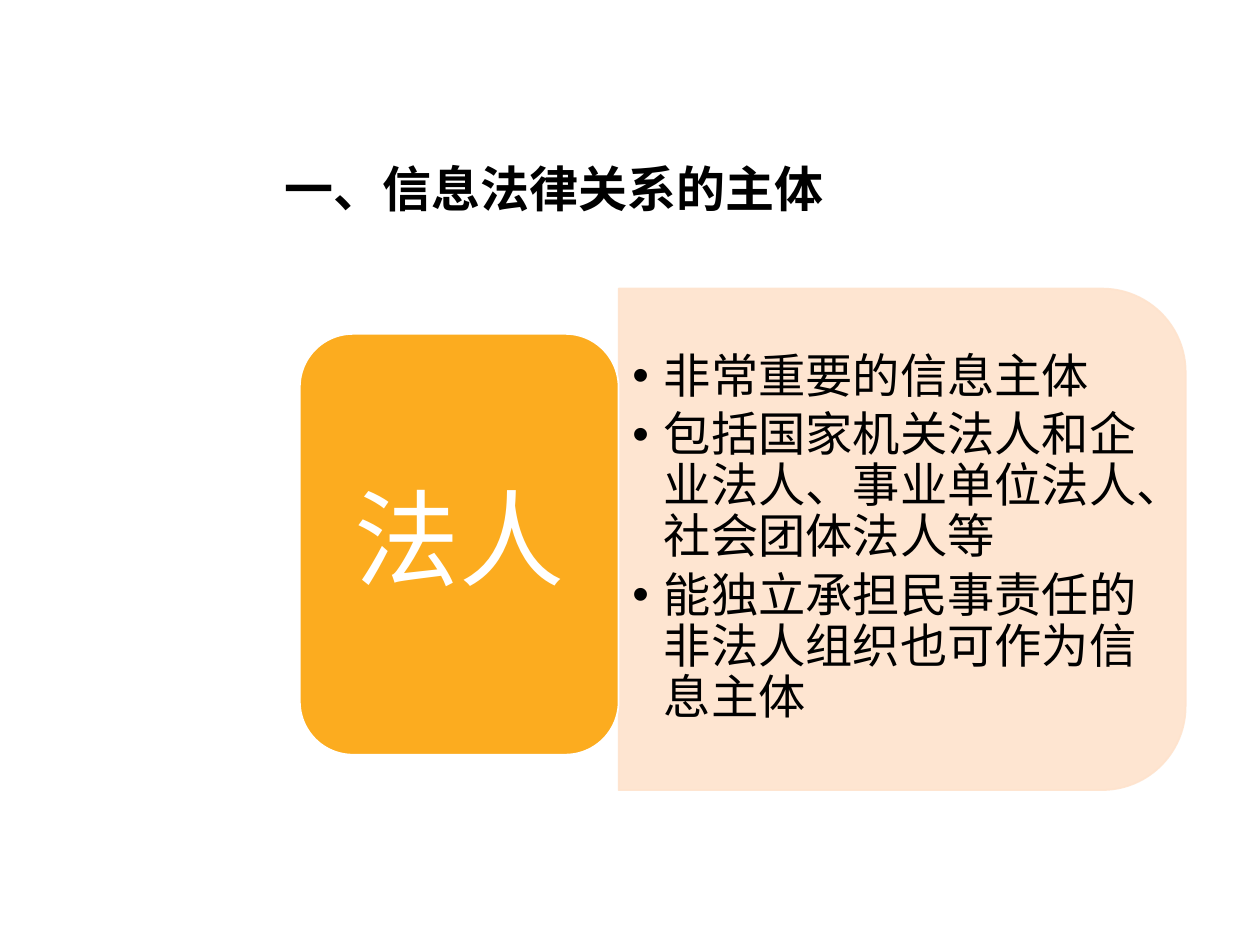
from lxml import etree
from pptx import Presentation
from pptx.dml.color import RGBColor
from pptx.enum.shapes import MSO_SHAPE
from pptx.enum.text import MSO_ANCHOR, MSO_AUTO_SIZE, PP_ALIGN
from pptx.oxml.ns import qn
from pptx.util import Inches, Pt

ROUND = MSO_SHAPE.ROUNDED_RECTANGLE
TAB = MSO_SHAPE.ROUND_2_SAME_RECTANGLE
TOP, MID = MSO_ANCHOR.TOP, MSO_ANCHOR.MIDDLE
LEFT, CENTER = PP_ALIGN.LEFT, PP_ALIGN.CENTER
FIXED = MSO_AUTO_SIZE.NONE
INK = {"text": "000000", "panel": "FEE3CD", "label": "FCAC1F", "white": "FFFFFF"}
POINTS = [
    "非常重要的信息主体",
    "包括国家机关法人和企业法人、事业单位法人、社会团体法人等",
    "能独立承担民事责任的非法人组织也可作为信息主体",
]


class Page:
    """Slide on a grid of 100 columns by 75 rows, with its text and fill style."""

    def __init__(self, deck):
        self.slide = deck.slides.add_slide(deck.slide_layouts[1])
        self.col = deck.slide_width / 100
        self.row = deck.slide_height / 75

    def box(self, x, y, w, h):
        return [int(n) for n in (x * self.col, y * self.row, w * self.col, h * self.row)]

    def place(self, shape, area):
        shape.left, shape.top, shape.width, shape.height = self.box(*area)

    def frame(self, shape, anchor, side, edge):
        frame = shape.text_frame
        frame.word_wrap, frame.auto_size = True, FIXED
        frame.vertical_anchor = anchor
        frame.margin_left = frame.margin_right = Inches(side)
        frame.margin_top = frame.margin_bottom = Inches(edge)
        return frame

    def add_text(self, para, text, size, ink="text", font="Arial", bold=False, align=LEFT):
        para.alignment = align
        para.space_before = Pt(0)
        run = para.add_run()
        run.text = text
        run.font.name, run.font.size, run.font.bold = font, Pt(size), bold
        run.font.color.rgb = RGBColor.from_string(INK[ink])

    def title(self, text, area):
        shape = self.slide.shapes.title
        self.place(shape, area)
        frame = self.frame(shape, TOP, 0.1, 0.05)
        self.add_text(frame.paragraphs[0], text, 28, font="DejaVu Sans", bold=True)

    def shape(self, kind, area, fill, line, alpha=None):
        shape = self.slide.shapes.add_shape(kind, *self.box(*area))
        shape.shadow.inherit = False
        shape.fill.solid()
        shape.fill.fore_color.rgb = RGBColor.from_string(INK[fill])
        shape.line.color.rgb = RGBColor.from_string(INK[line])
        shape.line.width = Pt(1)
        if alpha:
            for tint in shape._element.spPr.iter(qn("a:srgbClr")):
                etree.SubElement(tint, qn("a:alpha")).set("val", str(alpha * 1000))
        return shape

    def panel(self, area):
        shape = self.shape(TAB, area, "panel", "panel", 90)
        shape.rotation = 90

    def label(self, text, area):
        shape = self.shape(ROUND, area, "label", "white")
        para = self.frame(shape, MID, 0.25, 0.12).paragraphs[0]
        para.line_spacing = 0.9
        self.add_text(para, text, 60, "white", align=CENTER)

    def bullet(self, para):
        props = para._p.get_or_add_pPr()
        props.set("marL", str(Inches(0.25)))
        props.set("indent", str(-Inches(0.25)))
        etree.SubElement(props, qn("a:buFont")).set("typeface", "Arial")
        etree.SubElement(props, qn("a:buChar")).set("char", "•")

    def points(self, items, area):
        shape = self.slide.placeholders[1]
        self.place(shape, area)
        self.slide.shapes._spTree.append(shape._element)
        frame = self.frame(shape, MID, 0.11, 0.06)
        for i, item in enumerate(items):
            para = frame.add_paragraph() if i else frame.paragraphs[0]
            self.bullet(para)
            para.line_spacing, para.space_after = 0.9, Pt(4)
            self.add_text(para, item, 27)


def main():
    deck = Presentation()
    deck.slide_width, deck.slide_height = Inches(10), Inches(7.5)
    page = Page(deck)
    page.title("一、信息法律关系的主体", (21.6, 12.1, 70.9, 13.8))
    page.panel((51.7, 20.3, 39.8, 45))
    page.points(POINTS, (49.1, 24.8, 43.1, 35.9))
    page.label("法人", (23.8, 26.5, 25.3, 33.4))
    deck.save("out.pptx")


if __name__ == "__main__":
    main()
